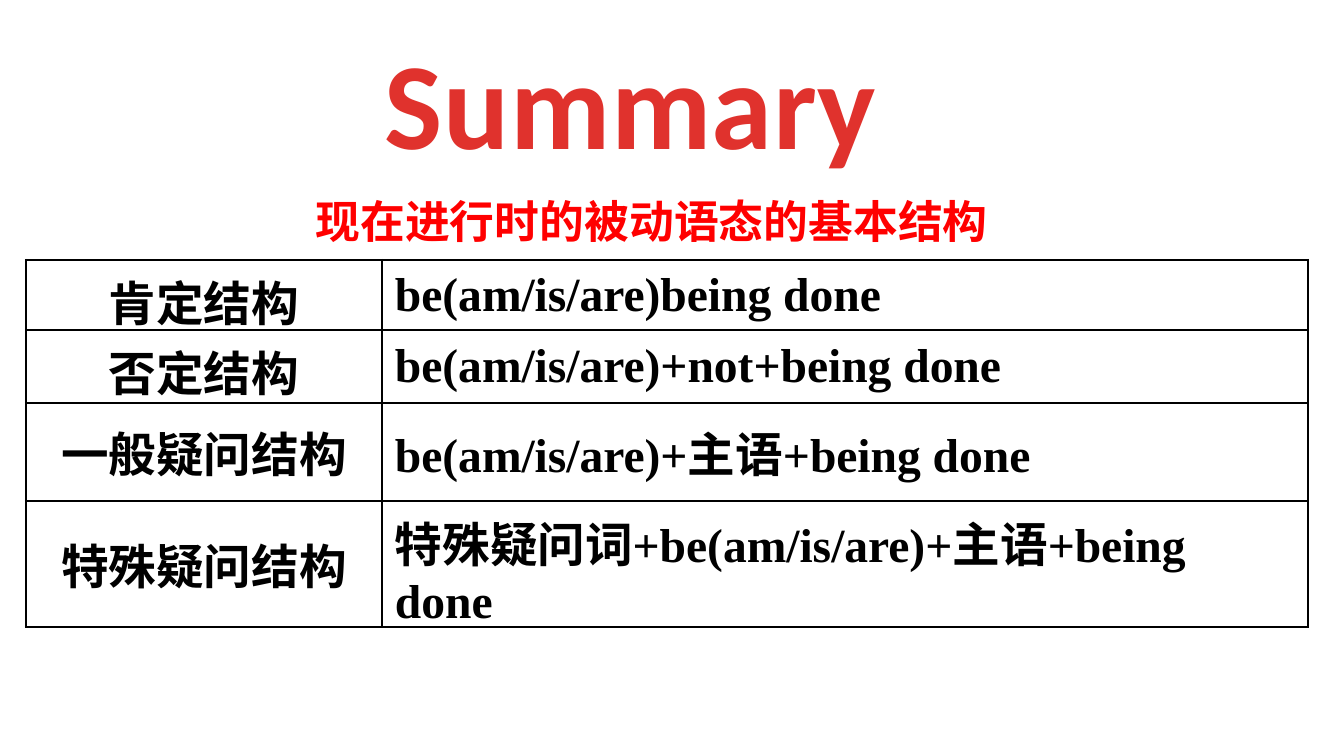
import pptx
import pptx.util
import pptx.dml.color
import pptx.enum.text
import pptx.oxml
import pptx.oxml.ns

TITLE = "Summary"
SUBTITLE = "现在进行时的被动语态的基本结构"
STRUCTURES = [
    ("肯定结构", "be(am/is/are)being done"),
    ("否定结构", "be(am/is/are)+not+being done"),
    ("一般疑问结构", "be(am/is/are)+主语+being done"),
    ("特殊疑问结构", "特殊疑问词+be(am/is/are)+主语+being done"),
]
COLUMN_WIDTHS = [356, 926]
ROW_HEIGHTS = [70, 73, 98, 126]
TABLE_LEFT, TABLE_TOP = 26, 260
CJK_FONT = "Noto Sans CJK SC"
ALIGN = pptx.enum.text.PP_ALIGN
MIDDLE = pptx.enum.text.MSO_ANCHOR.MIDDLE


def px(length):
    return pptx.util.Emu(round(length * 914400 / 100.8))


def color(value):
    return pptx.dml.color.RGBColor.from_string(value)


def write(frame, text, size, font, fill="000000", align=ALIGN.LEFT,
          line_spacing=None, tracking=None):
    para = frame.paragraphs[0]
    para.alignment = align
    if line_spacing:
        para.line_spacing = line_spacing
    span = para.add_run()
    span.text = text
    span.font.size = pptx.util.Pt(size)
    span.font.bold = True
    span.font.name = font
    span.font.color.rgb = color(fill)
    properties = span.font._element
    if tracking:
        properties.set("spc", str(tracking))
    east_asian = pptx.oxml.parse_xml(
        f'<a:ea {pptx.oxml.ns.nsdecls("a")} typeface="{CJK_FONT}"/>')
    properties.find(pptx.oxml.ns.qn("a:latin")).addnext(east_asian)


def set_margins(target):
    target.margin_left = target.margin_right = px(13)
    target.margin_top = target.margin_bottom = px(6)


def set_borders(cell, widths):
    properties = cell._tc.get_or_add_tcPr()
    for index, (side, width) in enumerate(widths.items()):
        line = pptx.oxml.parse_xml(
            f'<a:ln{side} {pptx.oxml.ns.nsdecls("a")} w="{pptx.util.Pt(width)}">'
            f'<a:solidFill><a:srgbClr val="000000"/></a:solidFill></a:ln{side}>')
        properties.insert(index, line)


deck = pptx.Presentation()
deck.slide_width, deck.slide_height = px(1344), px(756)
page = deck.slides.add_slide(deck.slide_layouts[6])

# Subtitle
box = page.shapes.add_textbox(px(31), px(161), px(1242), px(95))
box.text_frame.word_wrap = True
set_margins(box.text_frame)
write(box.text_frame, SUBTITLE, 32, CJK_FONT, fill="FF0000",
      align=ALIGN.CENTER, line_spacing=1.5)

# Table of structures
grid = page.shapes.add_table(
    len(STRUCTURES), len(COLUMN_WIDTHS), px(TABLE_LEFT), px(TABLE_TOP),
    px(sum(COLUMN_WIDTHS)), px(sum(ROW_HEIGHTS))).table
grid.first_row = grid.horz_banding = False
for column, width in zip(grid.columns, COLUMN_WIDTHS):
    column.width = px(width)
for row, height in zip(grid.rows, ROW_HEIGHTS):
    row.height = px(height)

last_row, last_column = len(STRUCTURES) - 1, len(COLUMN_WIDTHS) - 1
for r, structure in enumerate(STRUCTURES):
    for c, text in enumerate(structure):
        cell = grid.cell(r, c)
        cell.fill.background()
        cell.vertical_anchor = MIDDLE
        set_margins(cell)
        write(cell.text_frame, text, 34, "Times New Roman",
              align=ALIGN.LEFT if c else ALIGN.CENTER)
        set_borders(cell, {"L": 2 if c == 0 else 1,
                           "R": 2 if c == last_column else 1,
                           "T": 2 if r == 0 else 1,
                           "B": 2 if r == last_row else 1})

# Title
box = page.shapes.add_textbox(px(372), px(21), px(518), px(159))
box.text_frame.word_wrap = False
write(box.text_frame, TITLE, 88, "Calibri", fill="E0322D",
      align=ALIGN.CENTER, tracking=50)

deck.save("out.pptx")
